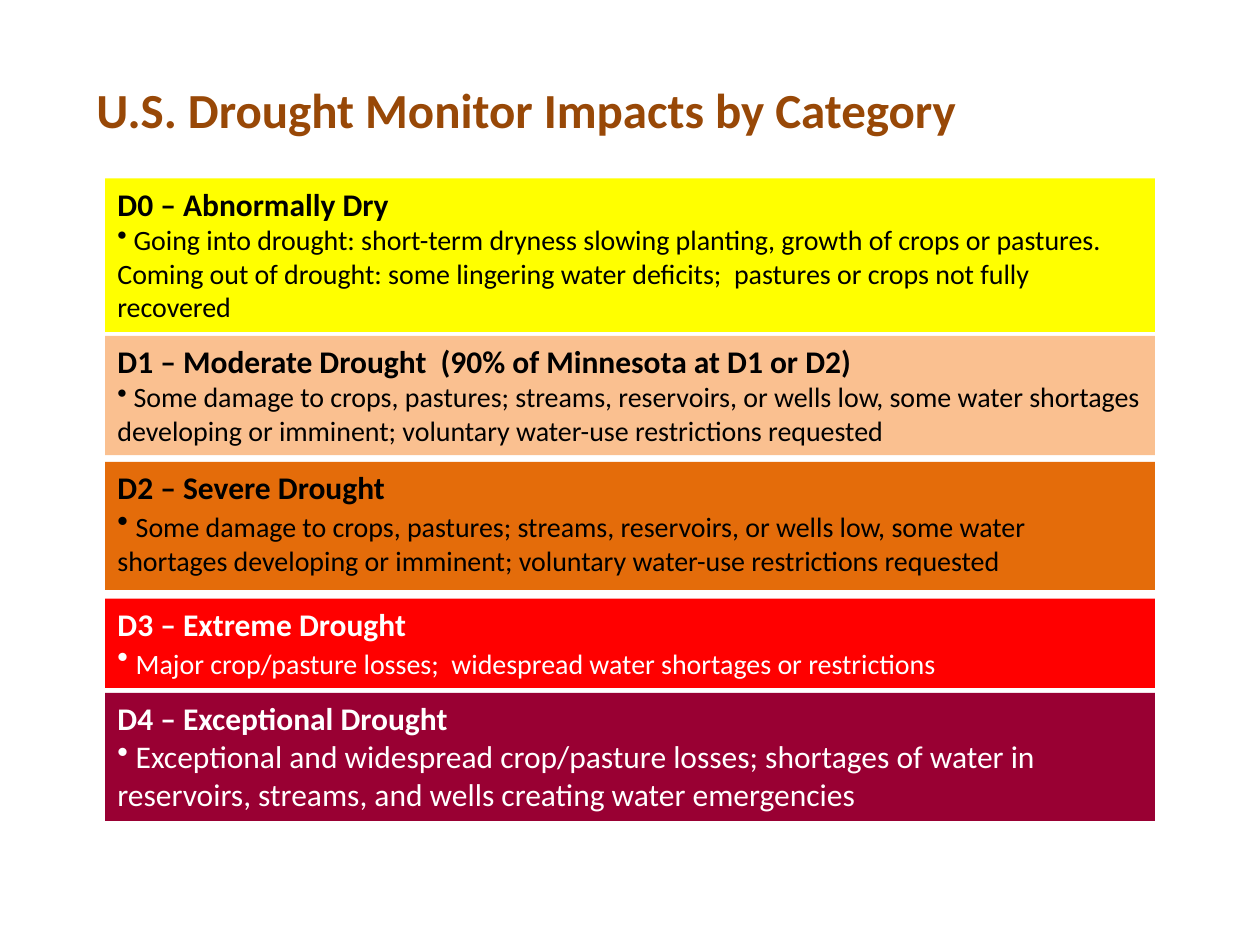
from lxml.etree import SubElement
from pptx import Presentation
from pptx.dml.color import RGBColor
from pptx.enum.shapes import MSO_SHAPE as Preset
from pptx.enum.text import MSO_ANCHOR as Anchor, MSO_AUTO_SIZE as AutoSize, PP_ALIGN as Align
from pptx.oxml.ns import qn
from pptx.util import Inches, Pt

BROWN = RGBColor(0x98, 0x48, 0x07)
YELLOW = RGBColor(0xFF, 0xFF, 0x00)
PEACH = RGBColor(0xFA, 0xC0, 0x90)
ORANGE = RGBColor(0xE4, 0x6C, 0x0A)
RED = RGBColor(0xFF, 0x00, 0x00)
MAROON = RGBColor(0x99, 0x00, 0x33)
BLACK = RGBColor(0x00, 0x00, 0x00)
WHITE = RGBColor(0xFF, 0xFF, 0xFF)

HEADLINE = "U.S. Drought Monitor Impacts by Category"
SHORTAGES = ("Some damage to crops, pastures; streams, reservoirs, or wells low, some water "
             "shortages developing or imminent; voluntary water-use restrictions requested")

# grid row, fill, ink, heading, impact, lines of impact, bullet size, impact size
CATEGORIES = [
    (17, YELLOW, BLACK, "D0 – Abnormally Dry",
     "Going into drought: short-term dryness slowing planting, growth of crops or pastures. "
     "Coming out of drought: some lingering water deficits;  pastures or crops not fully recovered",
     3, 16, 16),
    (32, PEACH, BLACK, "D1 – Moderate Drought  (90% of Minnesota at D1 or D2)", SHORTAGES, 2, 16, 16),
    (44, ORANGE, BLACK, "D2 – Severe Drought", SHORTAGES, 2, 18, 16),
    (57, RED, WHITE, "D3 – Extreme Drought",
     "Major crop/pasture losses;  widespread water shortages or restrictions", 1, 18, 16),
    (66, MAROON, WHITE, "D4 – Exceptional Drought",
     "Exceptional and widespread crop/pasture losses; shortages of water in reservoirs, "
     "streams, and wells creating water emergencies", 2, 18, 18),
]

WIDTH, HEIGHT = Inches(10), Inches(7.5)
ROW = HEIGHT / 90
BAND_LEFT, BAND_WIDTH = WIDTH / 12, WIDTH * 10 / 12
HEADING_SIZE = 18
LINE_SPACING = 1.22
PADDING = Inches(0.1)


def write(paragraph, text, size, color, bold=False):
    run = paragraph.add_run()
    run.text = text
    run.font.name = "Calibri"
    run.font.size = Pt(size)
    run.font.bold = bold
    run.font.color.rgb = color
    paragraph.alignment = Align.LEFT


def prepare(frame):
    frame.word_wrap = True
    frame.auto_size = AutoSize.SHAPE_TO_FIT_TEXT
    frame.vertical_anchor = Anchor.TOP


def add_bullet(paragraph):
    SubElement(paragraph._p.get_or_add_pPr(), qn("a:buChar"), char="•")


def add_category(slide, row, fill, ink, heading, impact, lines, bullet_size, impact_size):
    height = PADDING + Pt(LINE_SPACING * (HEADING_SIZE + lines * bullet_size))
    band = slide.shapes.add_shape(Preset.RECTANGLE, int(BAND_LEFT), int(row * ROW),
                                  int(BAND_WIDTH), height)
    band.shadow.inherit = False
    band.fill.solid()
    band.fill.fore_color.rgb = fill
    band.line.fill.background()
    prepare(band.text_frame)
    write(band.text_frame.paragraphs[0], heading, HEADING_SIZE, ink, bold=True)
    detail = band.text_frame.add_paragraph()
    write(detail, " ", bullet_size, ink)
    write(detail, impact, impact_size, ink)
    add_bullet(detail)


def main():
    deck = Presentation()
    deck.slide_width, deck.slide_height = WIDTH, HEIGHT
    slide = deck.slides.add_slide(deck.slide_layouts[6])
    title = slide.shapes.add_textbox(int(8 * ROW), int(7 * ROW), int(WIDTH * 0.85), Inches(0.57))
    prepare(title.text_frame)
    write(title.text_frame.paragraphs[0], HEADLINE, 28, BROWN, bold=True)
    for category in CATEGORIES:
        add_category(slide, *category)
    deck.save("out.pptx")


if __name__ == "__main__":
    main()
